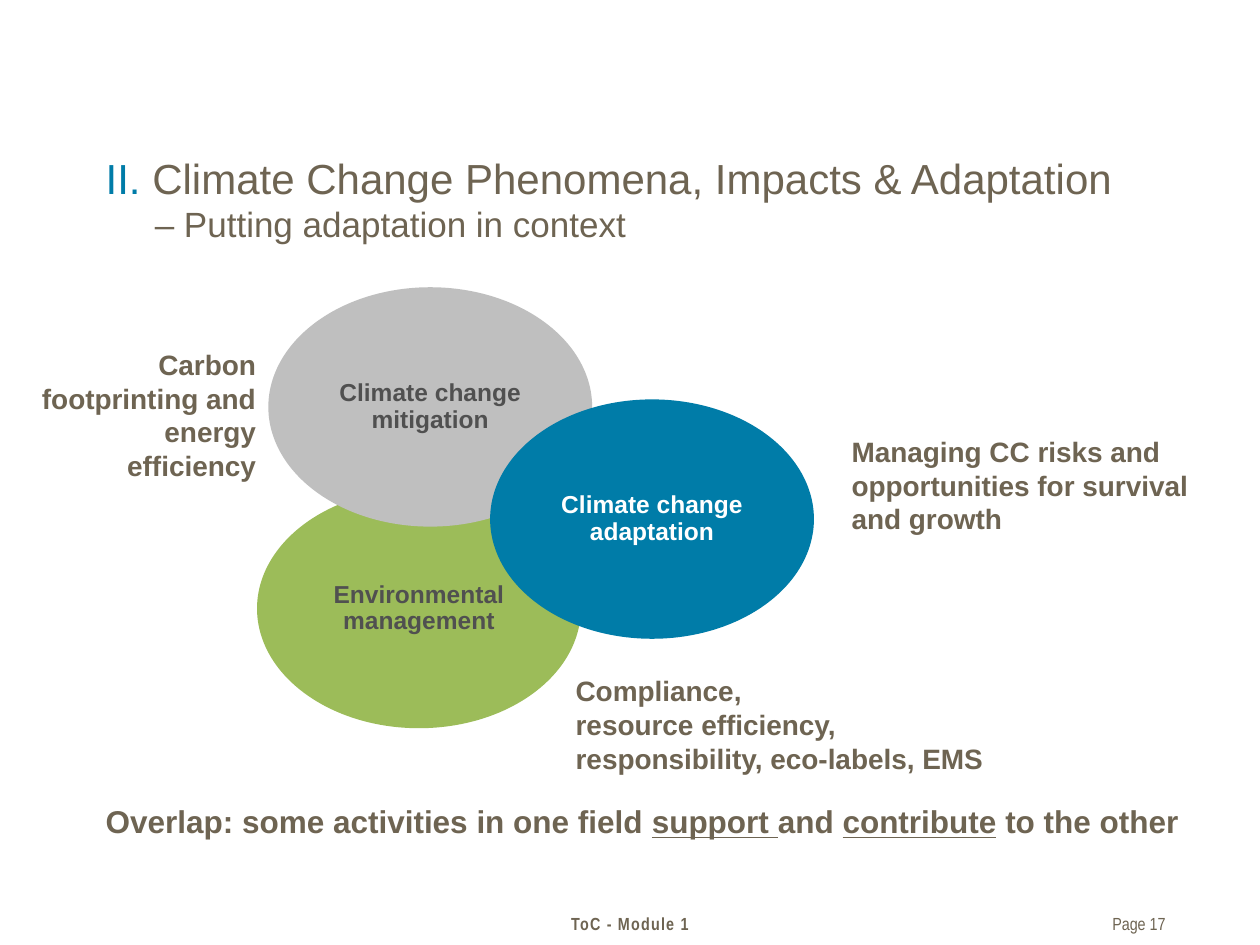
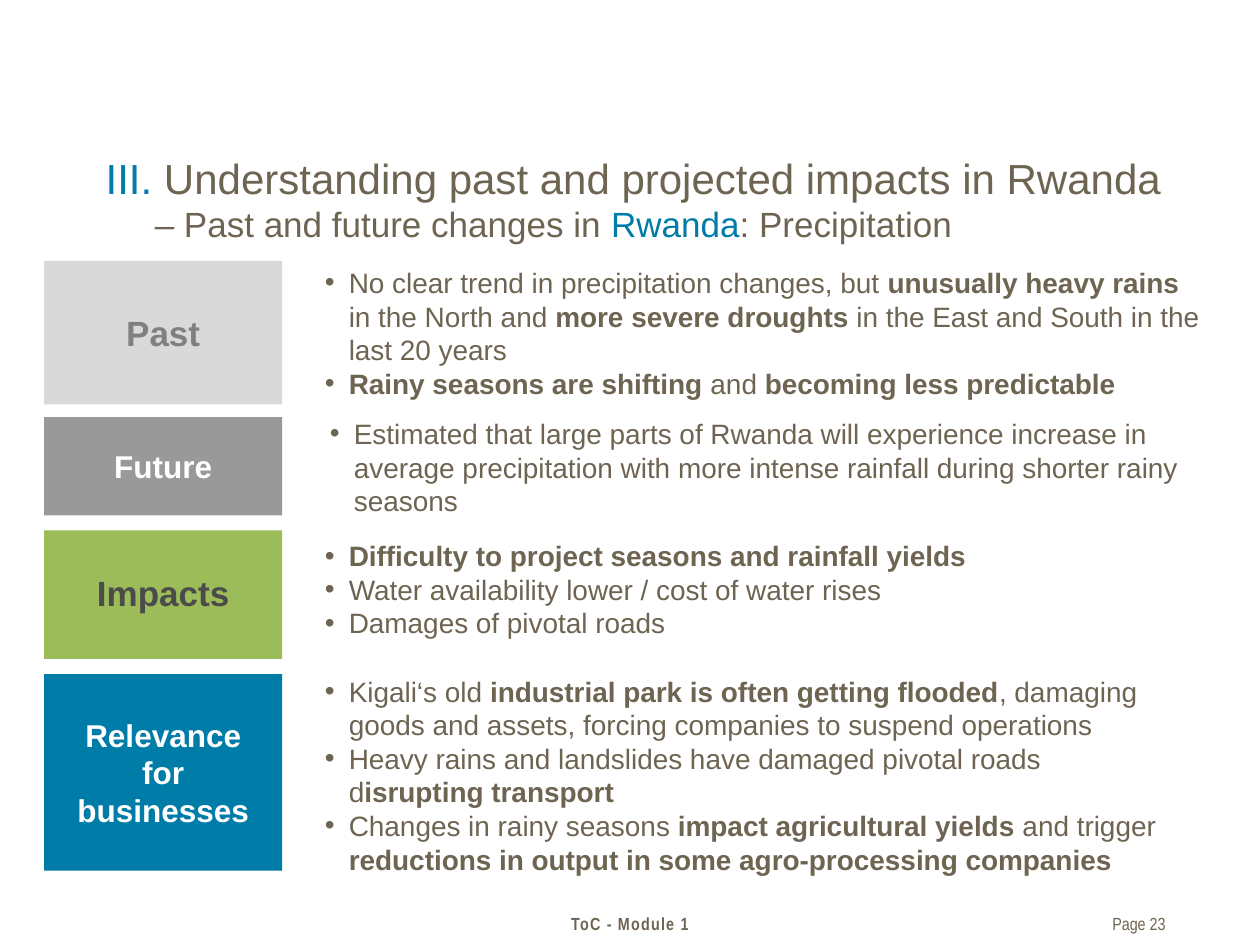
from lxml.etree import SubElement
from pptx import Presentation
from pptx.dml.color import RGBColor as RGB
from pptx.enum.shapes import MSO_SHAPE as Kind
from pptx.enum.text import MSO_ANCHOR as Anchor, PP_ALIGN as Align
from pptx.oxml.ns import qn
from pptx.util import Inches, Pt

HUES = {
    "text": "6E6452", "blue": "007CA8", "green": "9CBC59", "white": "FFFFFF",
    "silver": "BFBFBF", "dark": "505050", "pale": "D9D9D9", "mid": "808080",
    "gray": "999999", "coal": "4B4B4B",
}


def write(shape, paras, size=16, sub=20, bold=False, hue="text", face="Arial",
          align=Align.LEFT, anchor=Anchor.TOP, pad=(0.1, 0.05, 0.1, 0.05),
          hang=0, bullet=False, lead=None, track=0, mark=None):
    frame = shape.text_frame
    frame.word_wrap = True
    frame.vertical_anchor = anchor
    (frame.margin_left, frame.margin_top,
     frame.margin_right, frame.margin_bottom) = map(Inches, pad)
    for n, text in enumerate(paras):
        para = frame.add_paragraph() if n else frame.paragraphs[0]
        para.alignment = align
        if lead:
            para.line_spacing = lead
        props = para._p.get_or_add_pPr()
        if hang:
            props.set("marL", str(Inches(hang)))
            props.set("indent", str(-Inches(hang)))
        if bullet:
            SubElement(props, qn("a:buFont")).set("typeface", "Arial")
            SubElement(props, qn("a:buChar")).set("char", "•")
        for row, line in enumerate(text.split("\n")):
            if row:
                para.add_line_break()
            for part, words in enumerate(line.split("|")):
                if not words:
                    continue
                look = {"bold": bold, "underline": False, "hue": hue}
                if part % 2:
                    look.update(mark)
                run = para.add_run()
                run.text = words
                font = run.font
                font.name, font.size = face, Pt(sub if row else size)
                font.bold, font.underline = look["bold"], look["underline"]
                font.color.rgb = RGB.from_string(HUES[look["hue"]])
                if track:
                    run._r.get_or_add_rPr().set("spc", str(int(track * 100)))


def add(slide, at, kind=None, fill=None):
    spot = [Inches(v) for v in at]
    if kind is None:
        return slide.shapes.add_textbox(*spot)
    shape = slide.shapes.add_shape(kind, *spot)
    shape.shadow.inherit = False
    shape.fill.solid()
    shape.fill.fore_color.rgb = RGB.from_string(HUES[fill])
    shape.line.fill.background()
    return shape


deck = Presentation()
deck.slide_width, deck.slide_height = Inches(10), Inches(7.5)

heads = [
    (17, 8.5, "|II. |Climate Change Phenomena, Impacts & Adaptation\n"
              "– Putting adaptation in context"),
    (23, 8.94, "|III. |Understanding past and projected impacts in Rwanda\n"
               "– Past and future changes in |Rwanda|: Precipitation"),
]
for page, width, title in heads:
    slide = deck.slides.add_slide(deck.slide_layouts[6])
    write(add(slide, (0.74, 1.16, width, 0.92)), [title], size=24, hang=0.39,
          mark={"hue": "blue"})
    write(add(slide, (3.13, 7.2, 3.74, 0.27)), ["ToC - Module 1"], size=10,
          bold=True, face="Arial Narrow", align=Align.CENTER, track=0.7)
    write(add(slide, (8.24, 7.2, 1.01, 0.27)), [f"Page {page}"], size=10,
          face="Arial Narrow", align=Align.RIGHT, pad=(0.1, 0.05, 0, 0.05))

fields, rain = deck.slides

ovals = [
    (2.04, 3.88, "green", "dark", "Environmental management"),
    (2.13, 2.28, "silver", "dark", "Climate change mitigation"),
    (3.89, 3.17, "blue", "white", "Climate change adaptation"),
]
for left, top, fill, hue, name in ovals:
    oval = add(fields, (left, top, 2.57, 1.9), Kind.OVAL, fill)
    write(oval, [name], size=14, bold=True, hue=hue, align=Align.CENTER,
          anchor=Anchor.MIDDLE, pad=(0, 0, 0, 0), lead=0.9)

notes = [
    ((6.66, 3.4, 3.12, 0.91), Align.LEFT,
     ["Managing CC risks and opportunities for survival and growth"]),
    ((4.47, 5.3, 3.62, 0.91), Align.LEFT,
     ["Compliance,", "resource efficiency,",
      "responsibility, eco-labels, EMS"]),
    ((0.21, 2.71, 1.92, 1.18), Align.RIGHT,
     ["Carbon footprinting and energy efficiency"]),
]
for at, align, lines in notes:
    write(add(fields, at), lines, bold=True, align=align)
write(add(fields, (0.74, 6.32, 8.92, 0.4)),
      ["Overlap: some activities in one field |support |and |contribute|"
       " to the other"],
      size=18, bold=True, mark={"underline": True})

bands = [
    ("Past", 2.07, 1.14, "pale", "mid", 20, None, (2.48, 2.05, 7.2, 1.18),
     ["No clear trend in precipitation changes, but |unusually heavy rains|"
      " in the North and |more severe droughts |in the East and South"
      " in the last 20 years",
      "|Rainy seasons are shifting |and |becoming less predictable|"]),
    ("Future", 3.31, 0.78, "gray", "white", 18, None, (2.52, 3.25, 6.93, 0.91),
     ["Estimated that large parts of Rwanda will experience increase in"
      " average precipitation with more intense rainfall during shorter"
      " rainy seasons"]),
    ("Impacts", 4.21, 1.02, "green", "coal", 20, 0.9, (2.48, 4.22, 6.93, 0.91),
     ["|Difficulty to project seasons and rainfall yields|",
      "Water availability lower / cost of water rises",
      "Damages of pivotal roads"]),
    ("Relevance for businesses", 5.35, 1.56, "blue", "white", 18, None,
     (2.48, 5.29, 6.93, 1.72),
     ["Kigali‘s old |industrial park is often getting flooded|, damaging"
      " goods and assets, forcing companies to suspend operations",
      "Heavy rains and landslides have damaged pivotal roads"
      " d|isrupting transport|",
      "Changes in rainy seasons |impact agricultural yields |and trigger "
      "|reductions in output in some agro-processing companies|"]),
]
for name, top, height, fill, hue, size, lead, at, points in bands:
    band = add(rain, (0.35, top, 1.89, height), Kind.RECTANGLE, fill)
    write(band, [name], size=size, bold=True, hue=hue, align=Align.CENTER,
          anchor=Anchor.MIDDLE, pad=(0.24, 0.26, 0.24, 0.26), lead=lead)
    write(add(rain, at), points, anchor=Anchor.MIDDLE, hang=0.19, bullet=True,
          mark={"bold": True})

deck.save("out.pptx")
